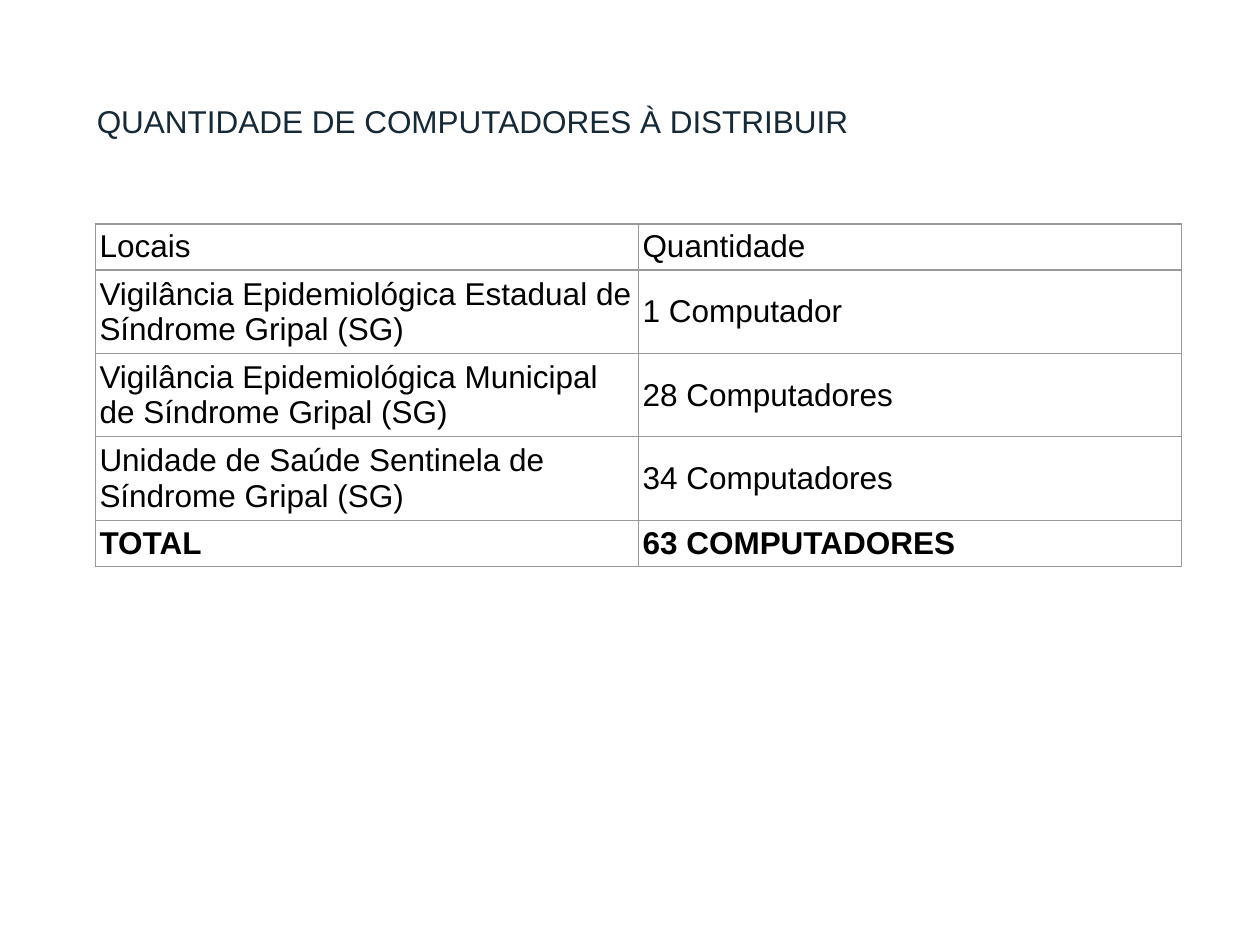
from dataclasses import dataclass

from lxml.etree import SubElement
from pptx import Presentation
from pptx.dml.color import RGBColor
from pptx.enum.text import MSO_ANCHOR, MSO_AUTO_SIZE, PP_ALIGN
from pptx.oxml.ns import qn
from pptx.util import Pt

HUES = {"title": "162937", "text": "000000", "rule": "999999", "fill": "FFFFFF"}
LEFT, WIDTH = 54.72, 620.64
LOW, HIGH = 26.3, 47.7
INSET = 2.16


@dataclass
class Row:
    place: str
    count: str
    height: float


@dataclass
class Grid:
    top: float
    rows: list[Row]
    bold: bool = False


GRIDS = [
    Grid(128, [
        Row("Locais", "Quantidade", LOW),
        Row("Vigilância Epidemiológica Estadual de Síndrome Gripal (SG)",
            "1 Computador", HIGH),
        Row("Vigilância Epidemiológica Municipal de Síndrome Gripal (SG)",
            "28 Computadores", HIGH),
        Row("Unidade de Saúde Sentinela de Síndrome Gripal (SG)",
            "34 Computadores", HIGH),
    ]),
    Grid(297.4, [Row("TOTAL", "63 COMPUTADORES", LOW)], True),
]


def add_run(para, text: str, hue: str, bold: bool = False) -> None:
    """Add one styled run to a paragraph."""
    run = para.add_run()
    run.text = text
    run.font.name = "Arial"
    run.font.size = Pt(18)
    run.font.bold = bold
    run.font.color.rgb = RGBColor.from_string(HUES[hue])


def add_rules(cell) -> None:
    """Draw a thin line on each side of a cell."""
    props = cell._tc.get_or_add_tcPr()
    for side in ("lnL", "lnR", "lnT", "lnB"):
        line = SubElement(props, qn(f"a:{side}"), w=str(Pt(0.75)))
        fill = SubElement(line, qn("a:solidFill"))
        SubElement(fill, qn("a:srgbClr"), val=HUES["rule"])


def fill_cell(cell, text: str, bold: bool) -> None:
    """Style a cell and write its text."""
    add_rules(cell)
    cell.fill.solid()
    cell.fill.fore_color.rgb = RGBColor.from_string(HUES["fill"])
    cell.vertical_anchor = MSO_ANCHOR.MIDDLE
    cell.margin_left = cell.margin_right = Pt(INSET)
    cell.margin_top = cell.margin_bottom = Pt(INSET)
    add_run(cell.text_frame.paragraphs[0], text, "text", bold)


def draw_grid(slide, grid: Grid) -> None:
    """Add a two-column table to the slide."""
    tall = sum(row.height for row in grid.rows)
    table = slide.shapes.add_table(
        len(grid.rows), 2, Pt(LEFT), Pt(grid.top), Pt(WIDTH), Pt(tall)).table
    table.first_row = table.horz_banding = False
    for line, row in zip(table.rows, grid.rows):
        line.height = Pt(row.height)
        for cell, text in zip(line.cells, (row.place, row.count)):
            fill_cell(cell, text, grid.bold)


def draw_title(slide, text: str) -> None:
    """Add the heading text box."""
    box = slide.shapes.add_textbox(Pt(48.24), Pt(54.72), Pt(623.52), Pt(28.8))
    frame = box.text_frame
    frame.word_wrap = True
    frame.auto_size = MSO_AUTO_SIZE.SHAPE_TO_FIT_TEXT
    para = frame.paragraphs[0]
    para.alignment = PP_ALIGN.JUSTIFY
    add_run(para, text, "title")


def main() -> None:
    """Build and save the slide."""
    deck = Presentation()
    deck.slide_width, deck.slide_height = Pt(720), Pt(540)
    slide = deck.slides.add_slide(deck.slide_layouts[6])
    draw_title(slide, "QUANTIDADE DE COMPUTADORES À DISTRIBUIR")
    for grid in GRIDS:
        draw_grid(slide, grid)
    deck.save("out.pptx")


if __name__ == "__main__":
    main()
